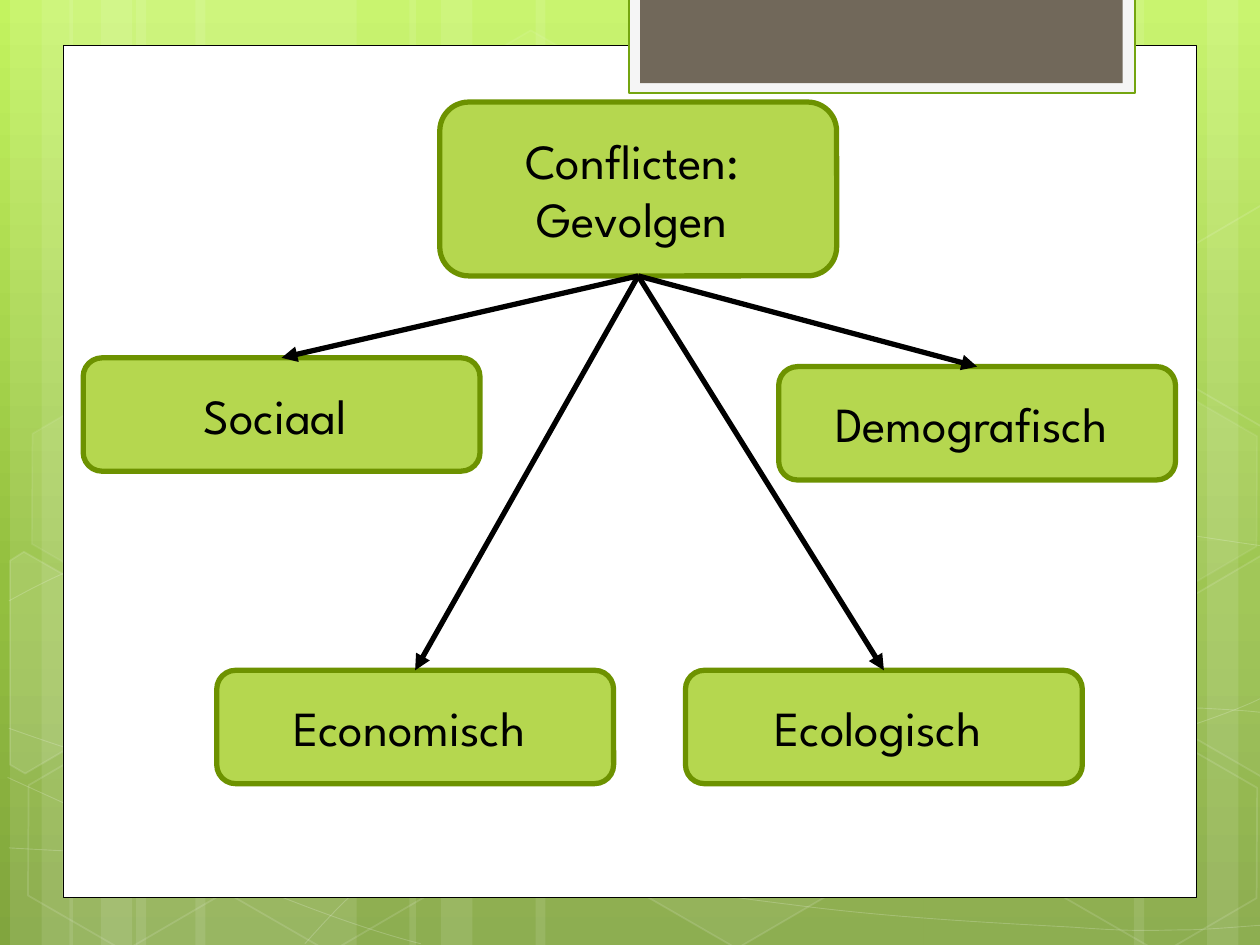
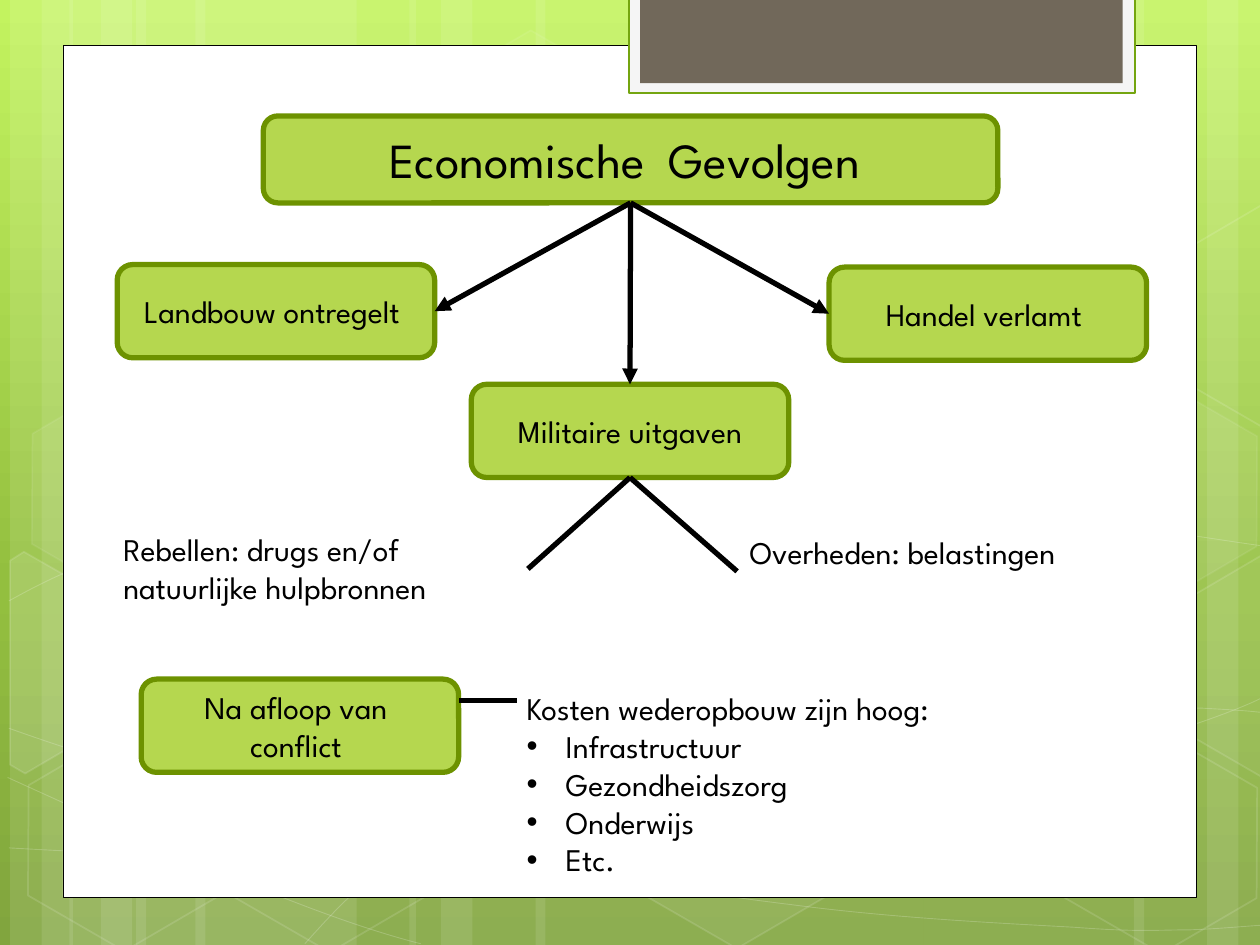
import copy

import lxml.etree
import pptx
import pptx.dml.color
import pptx.enum.shapes
import pptx.enum.text
import pptx.oxml.ns
import pptx.util

Inches = pptx.util.Inches
Pt = pptx.util.Pt
RGBColor = pptx.dml.color.RGBColor
SHAPE = pptx.enum.shapes.MSO_SHAPE
ALIGN = pptx.enum.text.PP_ALIGN
ANCHOR = pptx.enum.text.MSO_ANCHOR
qn = pptx.oxml.ns.qn

WHITE = RGBColor(0xFF, 0xFF, 0xFF)
BLACK = RGBColor(0x00, 0x00, 0x00)
GREEN = RGBColor(0x94, 0xC6, 0x00)
DARK_GREEN = RGBColor(0x6D, 0x92, 0x00)
TAB_GREEN = RGBColor(0x74, 0xA5, 0x10)
TAB_GREY = RGBColor(0xF5, 0xF5, 0xF5)
TAB_BROWN = RGBColor(0x71, 0x68, 0x5A)
SKY = [(0, RGBColor(0xC3, 0xF3, 0x5F)), (0.62, RGBColor(0x93, 0xBF, 0x3F)),
       (1, RGBColor(0x81, 0xA5, 0x3E))]
FONT = "League Spartan"
TOP, LEFT, BOTTOM, RIGHT = range(4)


def paint(shape, fill=None, fill_alpha=100, line=None, width=1, line_alpha=100):
    """Set fill and outline, with opacity in percent; None means no paint."""
    shape.shadow.inherit = False
    shape.line.width = Pt(width)
    properties = shape._element.spPr
    for target, holder, color, alpha in (
            (shape.fill, properties, fill, fill_alpha),
            (shape.line.fill, properties.find(qn("a:ln")), line, line_alpha)):
        if color is None:
            target.background()
            continue
        target.solid()
        target.fore_color.rgb = color
        if alpha < 100:
            rgb = holder.find(qn("a:solidFill")).find(qn("a:srgbClr"))
            lxml.etree.SubElement(rgb, qn("a:alpha"), val=str(alpha * 1000))


def write(shape, paragraphs, size, align, anchor):
    """Fill a shape with paragraphs; a newline inside one is a line break."""
    frame = shape.text_frame
    frame.word_wrap = True
    frame.auto_size = pptx.enum.text.MSO_AUTO_SIZE.NONE
    frame.vertical_anchor = anchor
    for number, text in enumerate(paragraphs):
        para = frame.add_paragraph() if number else frame.paragraphs[0]
        para.alignment = align
        para.space_before = Pt(0)
        for row, line in enumerate(text.split("\n")):
            if row:
                para.add_line_break()
            span = para.add_run()
            span.text = line
            span.font.name = FONT
            span.font.size = Pt(size)
            span.font.color.rgb = BLACK


deck = pptx.Presentation()
deck.slide_width, deck.slide_height = Inches(10), Inches(7.5)
master = deck.slide_master
consequences = deck.slides.add_slide(deck.slide_layouts.get_by_name("Blank"))
economy = deck.slides.add_slide(deck.slide_layouts.get_by_name("Title and Content"))
unused_title = economy.shapes.title._element
unused_title.getparent().remove(unused_title)

# Background gradient, on the master
sky = master.background.fill
sky.gradient()
sky.gradient_angle = 270
stop_list = master._element.find(".//" + qn("a:gsLst"))
stop_list.append(copy.deepcopy(stop_list[-1]))
for stop, (position, color) in zip(sky.gradient_stops, SKY):
    stop.position = position
    stop.color.rgb = color

# Backdrop: drawn on the first page, then moved to the master
canvas = consequences.shapes

BANDS = [(1.08, 1.75), (0.08, 0.5), (0.33, 0.83), (1.55, 1.75), (0.55, 0.5), (0.8, 0.83),
         (7.33, 1.75), (9.58, 0.5), (9, 0.83), (4.25, 3.08), (3.25, 0.5), (3.5, 0.83)]
for left, width in BANDS:
    band = canvas.add_shape(SHAPE.RECTANGLE, Inches(left), 0, Inches(width), Inches(7.5))
    paint(band, WHITE, 10)

# Each wave: a start point, then cubic segments of two handles and an end
WAVES = [
    [(0.07, 6.73), (0.61, 6.76), (1.15, 6.79), (1.9, 6.78), (2.65, 6.77), (3.58, 6.75),
     (4.58, 6.65), (5.58, 6.55), (7, 6.36), (7.92, 6.17), (8.83, 5.98), (9.77, 5.68),
     (10.07, 5.51)],
    [(0.07, 4.77), (0.36, 4.61), (0.65, 4.46), (1.21, 4.31), (1.78, 4.16), (2.59, 3.94),
     (3.47, 3.87), (4.36, 3.8), (5.44, 3.79), (6.54, 3.87), (7.64, 3.95), (9.47, 4.26),
     (10.07, 4.34)],
    [(0.06, 6.17), (1.27, 6.72), (2.47, 7.27), (3.34, 7.49)],
    [(0.07, 5.78), (0.38, 5.89), (0.7, 6), (1.28, 6.16), (1.86, 6.31), (2.73, 6.56),
     (3.57, 6.73), (4.4, 6.9), (5.45, 7.08), (6.28, 7.18), (7.11, 7.29), (8, 7.33),
     (8.53, 7.36), (9.05, 7.4), (9.19, 7.38), (9.45, 7.38), (9.71, 7.37), (9.89, 7.35),
     (10.07, 7.34)],
    [(2.42, 7.49), (2.6, 7.29), (2.78, 7.09), (3.02, 6.91), (3.26, 6.73), (3.6, 6.53),
     (3.88, 6.39), (4.16, 6.25), (4.33, 6.19), (4.7, 6.09), (5.06, 5.99), (5.73, 5.85),
     (6.08, 5.78), (6.44, 5.71), (6.49, 5.71), (6.8, 5.69), (7.11, 5.66), (7.6, 5.63),
     (7.94, 5.62), (8.29, 5.61), (8.86, 5.62), (8.86, 5.62), (8.86, 5.62), (9.53, 5.62),
     (9.53, 5.62), (9.71, 5.63), (9.88, 5.64), (9.97, 5.65), (10.06, 5.66), (10.03, 5.65),
     (10.06, 5.66)],
]
for wave in WAVES:
    points = [(Inches(x), Inches(y)) for x, y in wave]
    builder = canvas.build_freeform(*points[0])
    builder.add_line_segments(points[3::3], close=False)
    curve = builder.convert_to_shape()
    # Bend each straight segment into a cubic one
    for index, straight in enumerate(list(curve._element.iter(qn("a:lnTo")))):
        bend = lxml.etree.Element(qn("a:cubicBezTo"))
        for x, y in points[3 * index + 1:3 * index + 4]:
            lxml.etree.SubElement(bend, qn("a:pt"), x=str(x - curve.left),
                                  y=str(y - curve.top))
        straight.getparent().replace(straight, bend)
    paint(curve, line=WHITE, width=0.5, line_alpha=20)

# Left, top, fill opacity (0 is hollow), line opacity
HEXAGONS = [(3.34, 0.36, 4, 8), (4.97, 5.89, 6, 12), (0.11, 5.91, 0, 12),
            (0.14, 3.12, 7, 8), (1.74, 5.92, 0, 12), (7.53, 4.53, 10, 12),
            (8.34, 5.93, 0, 12), (8.34, 3.14, 7, 8)]
for left, top, fill_alpha, line_alpha in HEXAGONS:
    hexagon = canvas.add_shape(SHAPE.HEXAGON, Inches(left), Inches(top),
                               Inches(1.75), Inches(1.52))
    hexagon.adjustments[0] = 0.285
    hexagon.rotation = 30
    paint(hexagon, WHITE if fill_alpha else None, fill_alpha, WHITE, 1, line_alpha)

CUT_HEXAGONS = [
    (10, [(0.08, 4.45), (0.19, 4.38), (0.96, 4.82), (0.95, 5.7), (0.2, 6.14), (0.08, 6.07)]),
    (4, [(9.26, 4.85), (10.01, 4.41), (10.09, 4.46), (10.09, 6.13), (10.02, 6.17),
         (9.26, 5.73)]),
    (0, [(9.26, 2.07), (10.01, 1.63), (10.1, 1.68), (10.09, 3.35), (10.02, 3.39),
         (9.26, 2.95)]),
]
for fill_alpha, corners in CUT_HEXAGONS:
    corners = [(Inches(x), Inches(y)) for x, y in corners]
    builder = canvas.build_freeform(*corners[0])
    builder.add_line_segments(corners[1:], close=True)
    cut_hexagon = builder.convert_to_shape()
    paint(cut_hexagon, WHITE if fill_alpha else None, fill_alpha, WHITE, 1, 12)

PANELS = [((0.5, 0.36, 9, 6.76), WHITE, BLACK, 0.5),
          ((4.99, -0.02, 4.02, 0.76), TAB_GREY, TAB_GREEN, 1.25),
          ((5.08, -0.02, 3.83, 0.68), TAB_BROWN, None, 1)]
for place, fill, line, width in PANELS:
    panel = canvas.add_shape(SHAPE.RECTANGLE, *map(Inches, place))
    paint(panel, fill, line=line, width=width)

for number, shape in enumerate(list(canvas), 100):
    shape._element.find(".//" + qn("p:cNvPr")).set("id", str(number))
    master.shapes._spTree.append(shape._element)

# Diagrams: heading, boxes, notes, and links (from, side, to, side, arrow)
CONFLICTS = "Conflicten: ", "Gevolgen "
ECONOMIC = ("Economische  Gevolgen ",)
REBELS = "Rebellen: drugs en/of \nnatuurlijke hulpbronnen"
GOVERNMENTS = "Overheden: belastingen"
MILITARY = "Militaire uitgaven"
DIAGRAMS = [
    {"page": consequences,
     "heading": (CONFLICTS, (3.49, 0.81, 3.15, 1.38)),
     "box": (3.15, 0.9, 28),
     "boxes": {"Sociaal ": (0.66, 2.84), "Economisch ": (1.72, 5.32),
               "Demografisch ": (6.18, 2.91), "Ecologisch ": (5.44, 5.32)},
     "notes": {},
     "links": [(CONFLICTS, BOTTOM, name, TOP, True) for name in
               ("Sociaal ", "Economisch ", "Demografisch ", "Ecologisch ")]},
    {"page": economy,
     "heading": (ECONOMIC, (2.09, 0.92, 5.83, 0.69)),
     "box": (2.52, 0.74, 18),
     "boxes": {MILITARY: (3.74, 3.05), "Na afloop van \nconflict ": (1.12, 5.39),
               "Landbouw ontregelt ": (0.93, 2.1), "Handel verlamt ": (6.58, 2.12)},
     "notes": {REBELS: (0.88, 4.16), GOVERNMENTS: (5.85, 4.18)},
     "links": [(ECONOMIC, BOTTOM, "Landbouw ontregelt ", RIGHT, True),
               (ECONOMIC, BOTTOM, "Handel verlamt ", LEFT, True),
               (ECONOMIC, BOTTOM, MILITARY, TOP, True),
               (MILITARY, BOTTOM, REBELS, RIGHT, False),
               (MILITARY, BOTTOM, GOVERNMENTS, LEFT, False),
               ((4.1, 5.56), None, (3.64, 5.56), None, False)]},
]
for diagram in DIAGRAMS:
    shapes = diagram["page"].shapes
    heading, place = diagram["heading"]
    width, height, size = diagram["box"]
    boxes = [(heading, heading, place, 28)]
    for label, corner in diagram["boxes"].items():
        boxes.append((label, [label], corner + (width, height), size))
    ends = {}
    for label, lines, place, size in boxes:
        box = shapes.add_shape(SHAPE.ROUNDED_RECTANGLE, *map(Inches, place))
        paint(box, GREEN, 69, DARK_GREEN, 3)
        write(box, lines, size, ALIGN.CENTER, ANCHOR.MIDDLE)
        ends[label] = box

    for label, corner in diagram["notes"].items():
        note = shapes.add_textbox(*map(Inches, corner + (3.31, 0.71)))
        write(note, [label], 18, ALIGN.LEFT, ANCHOR.TOP)
        ends[label] = note

    for start, start_side, end, end_side, has_arrow in diagram["links"]:
        points = (0, 0, 0, 0) if start in ends else map(Inches, start + end)
        link = shapes.add_connector(pptx.enum.shapes.MSO_CONNECTOR.STRAIGHT, *points)
        if start in ends:
            link.begin_connect(ends[start], start_side)
            link.end_connect(ends[end], end_side)
        link.line.color.rgb = BLACK
        link.line.width = Pt(3)
        properties = link._element.spPr
        if has_arrow:
            lxml.etree.SubElement(properties.find(qn("a:ln")), qn("a:tailEnd"),
                                  type="triangle")
        lxml.etree.SubElement(properties, qn("a:effectLst"))

# Rebuilding costs list
costs = economy.placeholders[1]
costs.left, costs.top, costs.width, costs.height = map(Inches, (4.08, 5.42, 5, 1.62))
write(costs, ["Kosten wederopbouw zijn hoog:", "Infrastructuur", "Gezondheidszorg",
              "Onderwijs", "Etc."], 18, ALIGN.LEFT, ANCHOR.TOP)
for number, para in enumerate(costs.text_frame.paragraphs):
    indent = Inches(0.31) if number else 0
    properties = para._p.get_or_add_pPr()
    properties.set("marL", str(indent))
    properties.set("indent", str(-indent))
    if number:
        lxml.etree.SubElement(properties, qn("a:buChar"), char="•")
    else:
        lxml.etree.SubElement(properties, qn("a:buNone"))

deck.save("out.pptx")
